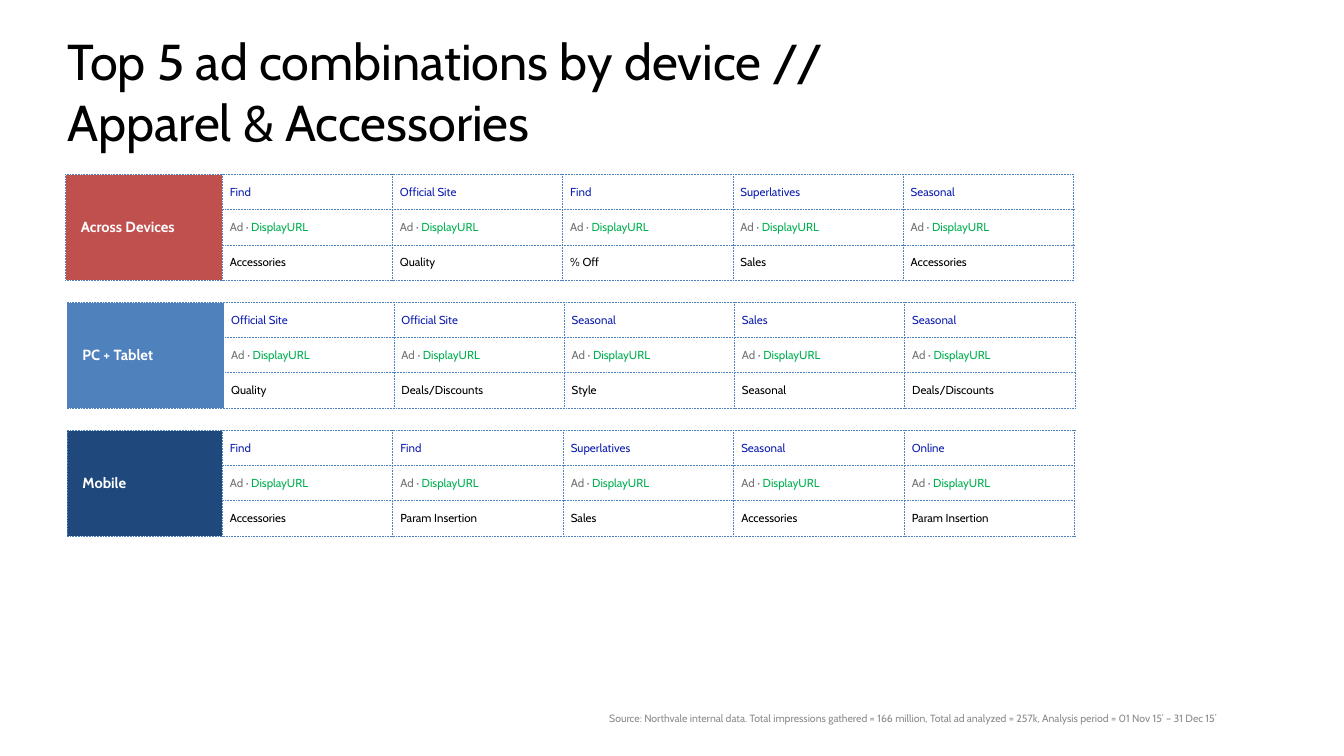
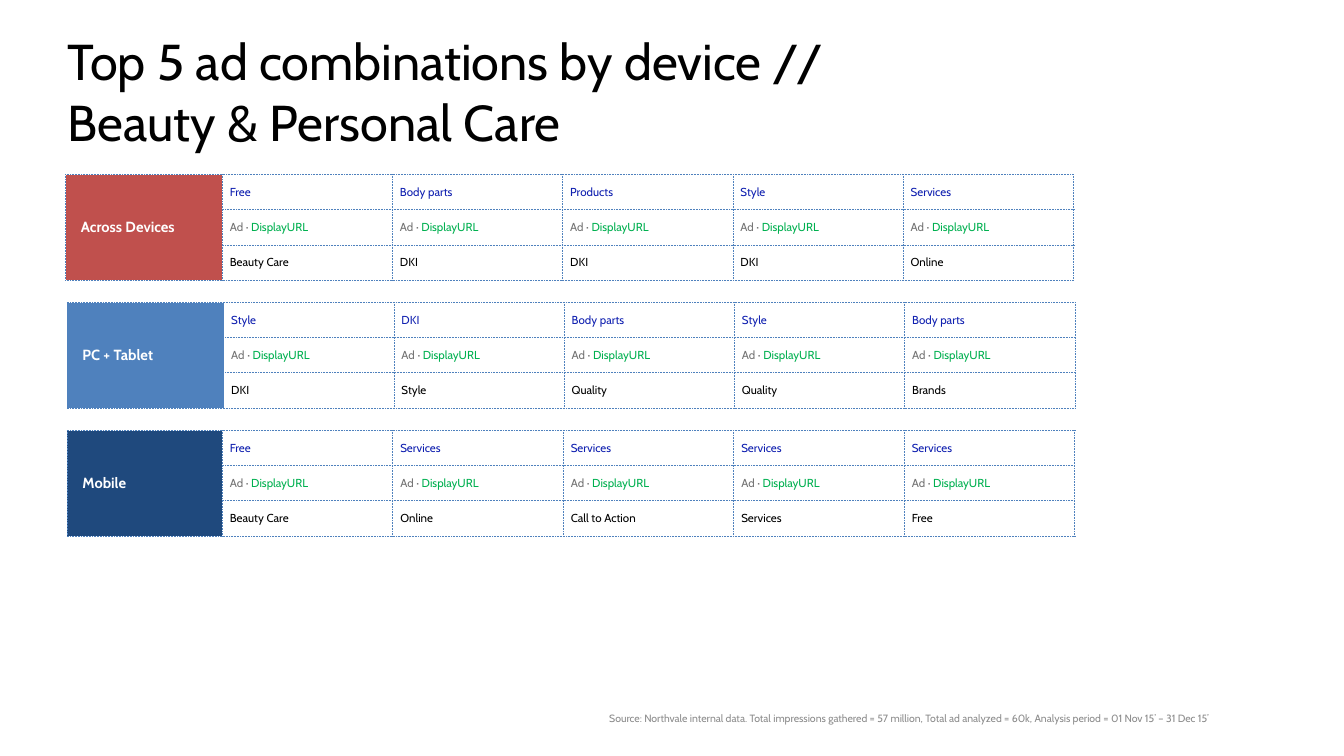
from dataclasses import dataclass

import pptx
import pptx.dml.color
import pptx.enum.text
import pptx.oxml
import pptx.oxml.ns
import pptx.util
from pptx.util import Cm


@dataclass(frozen=True)
class Theme:
    font: str = "Cabin"
    title_size: int = 48
    label_size: int = 14
    cell_size: int = 11
    source_size: int = 10
    black: str = "000000"
    white: str = "FFFFFF"
    headline: str = "1020B0"
    ad_tag: str = "737373"
    url: str = "00B050"
    source: str = "8C8C8C"
    border: str = "4F81BD"


THEME = Theme()

# Device label, label fill, table left and label column width in cm
DEVICES = [
    ("Across Devices", "C0504D", 2.21, 5.26),
    ("PC + Tablet", "4F81BD", 2.26, 5.26),
    ("Mobile", "1F497D", 2.26, 5.21),
]
TABLE_TOP = 5.87
TABLE_STEP = 4.3
TABLE_WIDTH = 33.86
ROW_HEIGHT = 1.18

# One (headlines, descriptions) pair for each device
SLIDES = [
    {
        "category": "Apparel & Accessories",
        "impressions": "166 million",
        "ads": "257k",
        "combinations": [
            (["Find", "Official Site", "Find", "Superlatives", "Seasonal"],
             ["Accessories", "Quality", "% Off", "Sales", "Accessories"]),
            (["Official Site", "Official Site", "Seasonal", "Sales", "Seasonal"],
             ["Quality", "Deals/Discounts", "Style", "Seasonal", "Deals/Discounts"]),
            (["Find", "Find", "Superlatives", "Seasonal", "Online"],
             ["Accessories", "Param Insertion", "Sales", "Accessories", "Param Insertion"]),
        ],
    },
    {
        "category": "Beauty & Personal Care",
        "impressions": "57 million",
        "ads": "60k",
        "combinations": [
            (["Free", "Body parts", "Products", "Style", "Services"],
             ["Beauty Care", "DKI", "DKI", "DKI", "Online"]),
            (["Style", "DKI", "Body parts", "Style", "Body parts"],
             ["DKI", "Style", "Quality", "Quality", "Brands"]),
            (["Free", "Services", "Services", "Services", "Services"],
             ["Beauty Care", "Online", "Call to Action", "Services", "Free"]),
        ],
    },
]


def rgb(color):
    return pptx.dml.color.RGBColor.from_string(color)


def add_run(p, text, size, color, bold=False):
    r = p.add_run()
    r.text = text
    r.font.name = THEME.font
    r.font.size = pptx.util.Pt(size)
    r.font.bold = bold
    r.font.color.rgb = rgb(color)


def set_margins(target, horizontal, vertical):
    target.margin_left = target.margin_right = Cm(horizontal)
    target.margin_top = target.margin_bottom = Cm(vertical)


def format_frame(tf):
    """Make a margin-free, left-aligned frame and return its paragraph."""
    set_margins(tf, 0, 0)
    tf.word_wrap = True
    tf.auto_size = pptx.enum.text.MSO_AUTO_SIZE.SHAPE_TO_FIT_TEXT
    tf.vertical_anchor = pptx.enum.text.MSO_ANCHOR.TOP
    p = tf.paragraphs[0]
    p.alignment = pptx.enum.text.PP_ALIGN.LEFT
    return p


def set_title(slide, category):
    sp = slide.shapes.title
    sp.left, sp.top, sp.width, sp.height = Cm(2.26), Cm(1.02), Cm(40.64), Cm(4.11)
    p = format_frame(sp.text_frame)
    add_run(p, "Top 5 ad combinations by device //", THEME.title_size, THEME.black)
    p.add_line_break()
    add_run(p, category, THEME.title_size, THEME.black)


def add_source(slide, impressions, ads):
    sp = slide.shapes.add_textbox(Cm(20.47), Cm(23.93), Cm(22.43), Cm(0.5))
    text = (f"Source: Northvale internal data. Total impressions gathered = {impressions}, "
            f"Total ad analyzed = {ads}, Analysis period = 01 Nov 15’ – 31 Dec 15’")
    add_run(format_frame(sp.text_frame), text, THEME.source_size, THEME.source)


def set_dotted_borders(cell):
    tc_pr = cell._tc.get_or_add_tcPr()
    for i, side in enumerate(("lnL", "lnR", "lnT", "lnB")):
        tc_pr.insert(i, pptx.oxml.parse_xml(
            f'<a:{side} {pptx.oxml.ns.nsdecls("a")} w="12700">'
            f'<a:solidFill><a:srgbClr val="{THEME.border}"/></a:solidFill>'
            f'<a:prstDash val="sysDot"/></a:{side}>'))


def format_cell(cell, fill, horizontal, vertical):
    cell.fill.solid()
    cell.fill.fore_color.rgb = rgb(fill)
    cell.vertical_anchor = pptx.enum.text.MSO_ANCHOR.MIDDLE
    set_margins(cell, horizontal, vertical)
    set_dotted_borders(cell)


def add_device_table(slide, device, top, headlines, descriptions):
    label, fill, left, label_width = device
    table = slide.shapes.add_table(
        3, len(headlines) + 1, Cm(left), Cm(top), Cm(TABLE_WIDTH), Cm(3 * ROW_HEIGHT)).table
    table.first_row = table.horz_banding = False
    for row in table.rows:
        row.height = Cm(ROW_HEIGHT)
    for i, column in enumerate(table.columns):
        column.width = Cm((TABLE_WIDTH - label_width) / len(headlines) if i else label_width)

    for row in range(3):
        format_cell(table.cell(row, 0), fill, 0.51, 0)
    table.cell(0, 0).merge(table.cell(2, 0))
    add_run(table.cell(0, 0).text_frame.paragraphs[0], label,
            THEME.label_size, THEME.white, bold=True)

    for col, (headline, description) in enumerate(zip(headlines, descriptions), 1):
        ad_lines = [
            [(headline, THEME.headline)],
            [("Ad · ", THEME.ad_tag), ("DisplayURL", THEME.url)],
            [(description, THEME.black)],
        ]
        for row, runs in enumerate(ad_lines):
            cell = table.cell(row, col)
            format_cell(cell, THEME.white, 0.25, 0.13)
            for text, color in runs:
                add_run(cell.text_frame.paragraphs[0], text, THEME.cell_size, color)


def main():
    prs = pptx.Presentation()
    prs.slide_width, prs.slide_height = Cm(45.16), Cm(25.4)
    title_only = prs.slide_layouts[5]
    for content in SLIDES:
        slide = prs.slides.add_slide(title_only)
        set_title(slide, content["category"])
        add_source(slide, content["impressions"], content["ads"])
        for i, (device, combination) in enumerate(zip(DEVICES, content["combinations"])):
            add_device_table(slide, device, TABLE_TOP + i * TABLE_STEP, *combination)
    prs.save("out.pptx")


if __name__ == "__main__":
    main()
